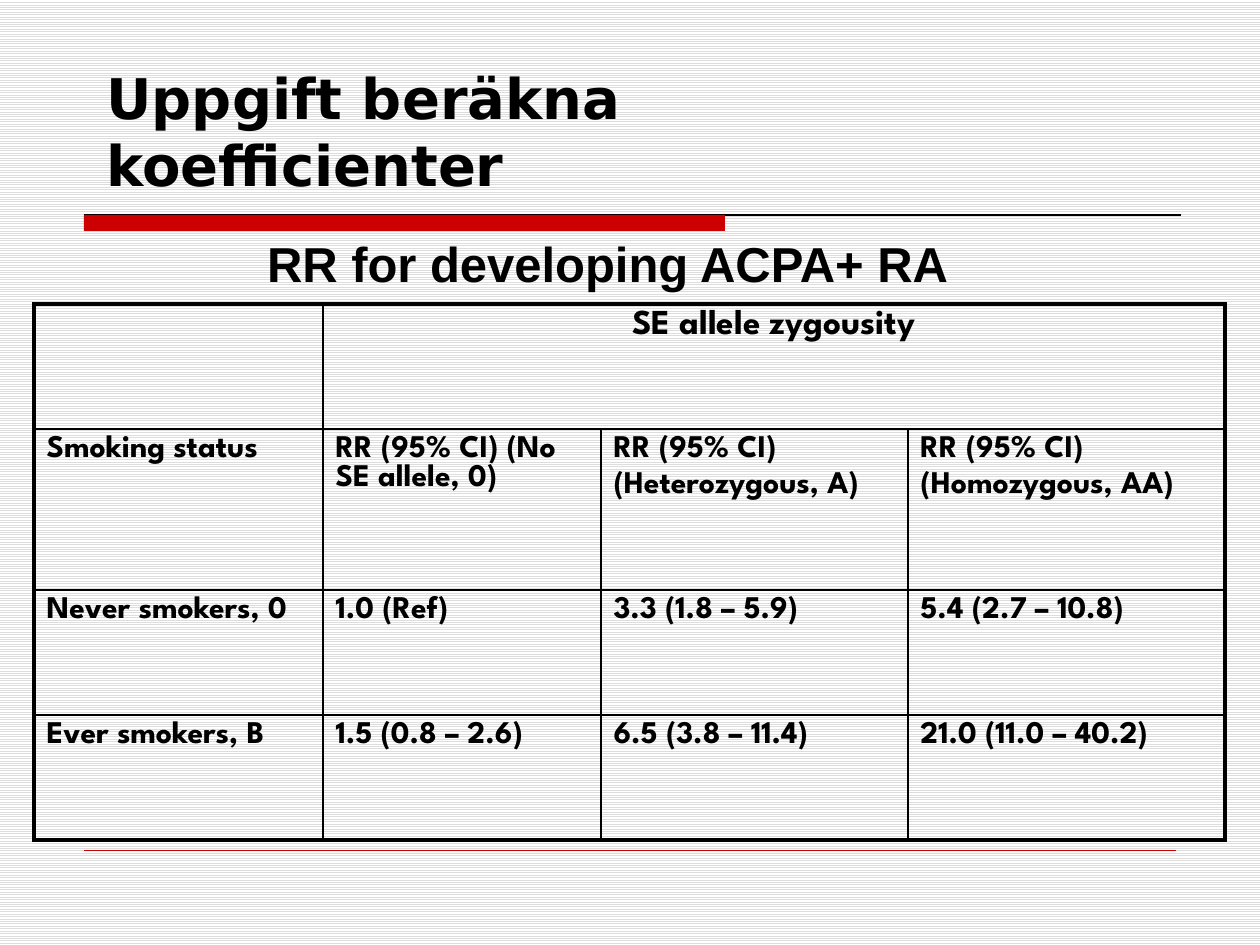
from dataclasses import dataclass

from lxml.etree import SubElement
from pptx import Presentation
from pptx.dml.color import RGBColor
from pptx.enum.dml import MSO_PATTERN
from pptx.enum.shapes import MSO_CONNECTOR, MSO_SHAPE
from pptx.enum.text import MSO_ANCHOR, PP_ALIGN
from pptx.oxml.ns import qn
from pptx.util import Pt

EMU_PER_PX = 914400 / 126


def px(length):
    """Turn a length in px into EMU."""
    return round(length * EMU_PER_PX)


@dataclass(frozen=True)
class Theme:
    """Colours, fonts and type sizes of the slide."""
    ink: str = "000000"
    accent: str = "CC0000"
    paper: str = "FFFFFF"
    stripe: str = "DDDDDD"
    title_font: str = "DejaVu Sans"
    caption_font: str = "Arial"
    table_font: str = "League Spartan"
    title_size: int = 32
    caption_size: int = 28
    header_size: int = 20
    body_size: int = 18
    outer_border: float = 2.25
    inner_border: float = 1


class SlideBuilder:
    """Adds themed elements to one slide."""

    def __init__(self, slide, theme):
        """Keep the slide and its theme."""
        self.slide = slide
        self.theme = theme

    def background(self):
        """Fill the background with light horizontal stripes."""
        fill = self.slide.background.fill
        fill.patterned()
        fill.pattern = MSO_PATTERN.LIGHT_HORIZONTAL
        fill.fore_color.rgb = RGBColor.from_string(self.theme.stripe)
        fill.back_color.rgb = RGBColor.from_string(self.theme.paper)

    def bar(self, left, top, width, height):
        """Add a plain accent bar."""
        shape = self.slide.shapes.add_shape(
            MSO_SHAPE.RECTANGLE, px(left), px(top), px(width), px(height))
        shape.shadow.inherit = False
        shape.fill.solid()
        shape.fill.fore_color.rgb = RGBColor.from_string(self.theme.accent)
        shape.line.fill.background()

    def rule(self, left, right, top, color, weight):
        """Add a horizontal line."""
        connector = self.slide.shapes.add_connector(
            MSO_CONNECTOR.STRAIGHT, px(left), px(top), px(right), px(top))
        connector.line.color.rgb = RGBColor.from_string(color)
        connector.line.width = Pt(weight)
        SubElement(connector._element.spPr, qn("a:effectLst"))

    def run(self, paragraph, text, font, size):
        """Add one bold run to a paragraph."""
        run = paragraph.add_run()
        run.text = text
        run.font.name = font
        run.font.size = Pt(size)
        run.font.bold = True
        run.font.color.rgb = RGBColor.from_string(self.theme.ink)

    def text(self, box, text, font, size, align=PP_ALIGN.LEFT, anchor=MSO_ANCHOR.TOP):
        """Add a wrapping text box."""
        frame = self.slide.shapes.add_textbox(*map(px, box)).text_frame
        frame.word_wrap = True
        frame.vertical_anchor = anchor
        paragraph = frame.paragraphs[0]
        paragraph.alignment = align
        self.run(paragraph, text, font, size)

    def cell_text(self, cell, text, size, align):
        """Write one paragraph per line of text into a cell."""
        frame = cell.text_frame
        for index, line in enumerate(text.split("\n")):
            paragraph = frame.add_paragraph() if index else frame.paragraphs[0]
            paragraph.alignment = align
            paragraph.space_before = Pt(size * 0.24)
            self.run(paragraph, line, self.theme.table_font, size)

    def cell_borders(self, cell, outer_sides):
        """Draw the four cell borders, heavier on the outer sides."""
        properties = cell._tc.get_or_add_tcPr()
        for side, is_outer in outer_sides.items():
            weight = self.theme.outer_border if is_outer else self.theme.inner_border
            line = SubElement(properties, qn(f"a:ln{side}"), w=str(Pt(weight)))
            fill = SubElement(line, qn("a:solidFill"))
            SubElement(fill, qn("a:srgbClr"), val=self.theme.ink)

    def table(self, left, top, widths, heights, rows):
        """Add a bordered table whose first row has one merged heading."""
        table = self.slide.shapes.add_table(
            len(heights), len(widths), px(left), px(top),
            px(sum(widths)), px(sum(heights))).table
        table.first_row = table.horz_banding = False
        for column, width in zip(table.columns, widths):
            column.width = px(width)
        for row, height in zip(table.rows, heights):
            row.height = px(height)
        last_row, last_column = len(heights) - 1, len(widths) - 1
        table.cell(0, 1).merge(table.cell(0, last_column))
        for r, texts in enumerate(rows):
            size = self.theme.body_size if r else self.theme.header_size
            align = PP_ALIGN.LEFT if r else PP_ALIGN.CENTER
            for c, text in enumerate(texts):
                cell = table.cell(r, c)
                self.cell_borders(cell, {"L": c == 0, "R": c == last_column,
                                         "T": r == 0, "B": r == last_row})
                cell.fill.background()
                if text:
                    self.cell_text(cell, text, size, align)
        spanning = table.cell(0, 1)._tc.tcPr.find(qn("a:lnR"))
        spanning.set("w", str(Pt(self.theme.outer_border)))


def main():
    """Build and save the slide."""
    presentation = Presentation()
    presentation.slide_width = px(1260)
    presentation.slide_height = px(945)
    theme = Theme()
    builder = SlideBuilder(
        presentation.slides.add_slide(presentation.slide_layouts[6]), theme)
    builder.background()
    builder.rule(84, 1181, 215, theme.ink, 0.75)
    builder.bar(84, 215, 641, 16)
    builder.rule(84, 1176, 850, theme.accent, 0.25)
    builder.table(34, 304, [289, 278, 307, 317], [125, 161, 125, 125], [
        ["", "SE allele zygousity", "", ""],
        ["Smoking status", "RR (95% CI) (No SE allele, 0)",
         "RR (95% CI)\n(Heterozygous, A)", "RR (95% CI)\n(Homozygous, AA)"],
        ["Never smokers, 0", "1.0 (Ref)", "3.3 (1.8 – 5.9)", "5.4 (2.7 – 10.8)"],
        ["Ever smokers, B", "1.5 (0.8 – 2.6)", "6.5 (3.8 – 11.4)", "21.0 (11.0 – 40.2)"],
    ])
    builder.text((156, 227, 903, 72), "RR for developing ACPA+ RA",
                 theme.caption_font, theme.caption_size, PP_ALIGN.CENTER)
    builder.text((94, 55, 922, 149), "Uppgift beräkna koefficienter",
                 theme.title_font, theme.title_size, anchor=MSO_ANCHOR.BOTTOM)
    presentation.save("out.pptx")


if __name__ == "__main__":
    main()
